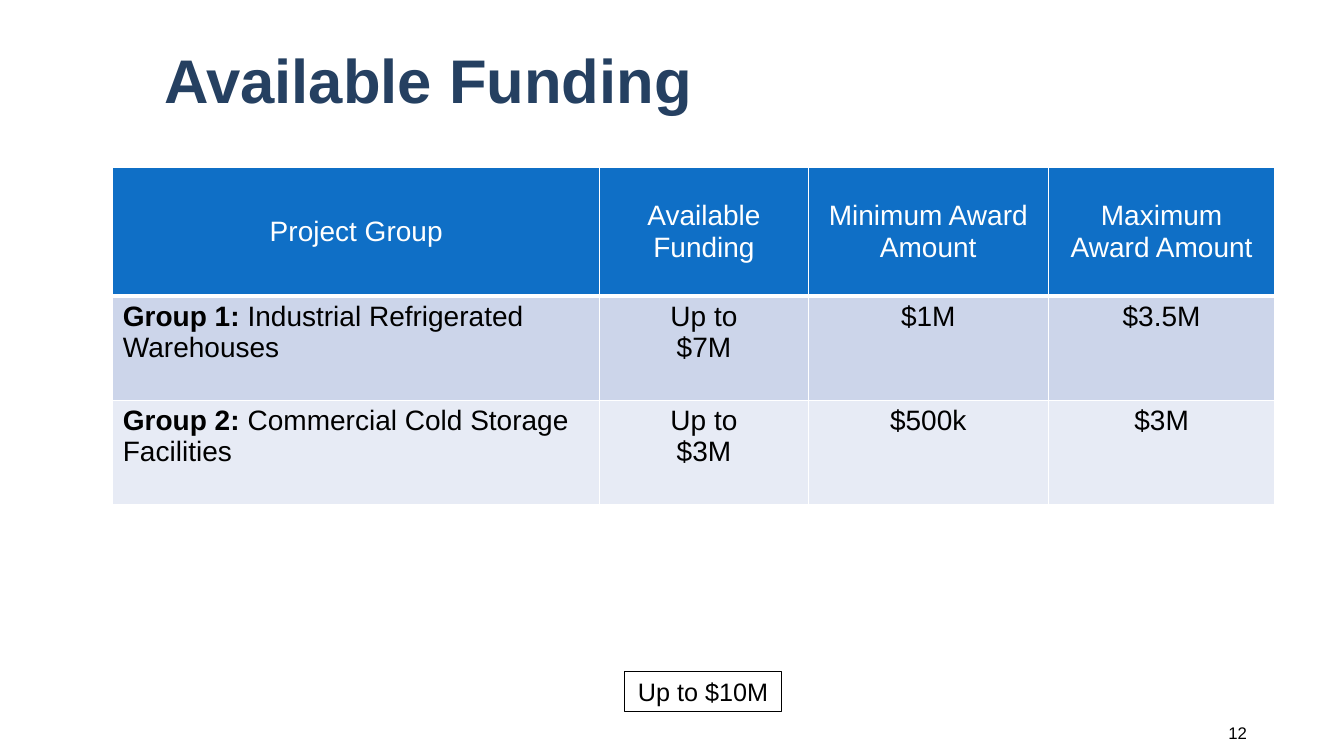
from dataclasses import dataclass

from lxml import etree
from pptx import Presentation
from pptx.dml.color import RGBColor
from pptx.enum.shapes import MSO_SHAPE
from pptx.enum.text import MSO_ANCHOR, PP_ALIGN
from pptx.oxml.ns import qn
from pptx.util import Pt

LEFT, CENTER, RIGHT = PP_ALIGN.LEFT, PP_ALIGN.CENTER, PP_ALIGN.RIGHT
TOP, MIDDLE = MSO_ANCHOR.TOP, MSO_ANCHOR.MIDDLE
RECTANGLE = MSO_SHAPE.RECTANGLE


@dataclass(frozen=True)
class Theme:
    """Colours, font and type sizes of the slide."""
    font: str = "Arial"
    navy: str = "254061"
    header: str = "0F6FC6"
    bands: tuple = ("CCD5EA", "E7EBF5")
    white: str = "FFFFFF"
    black: str = "000000"
    title_size: int = 44
    table_size: int = 20
    total_size: int = 18
    page_size: int = 12


THEME = Theme()
COLUMN_WIDTHS = (347.8, 149, 171.4, 162)
ROW_HEIGHTS = (92, 74.3, 74.3)
HEADINGS = ("Project Group", "Available Funding",
            "Minimum Award Amount", "Maximum Award Amount")
GROUPS = (
    ("Group 1: ", "Industrial Refrigerated Warehouses",
     ("Up to\n$7M", "$1M", "$3.5M")),
    ("Group 2: ", "Commercial Cold Storage Facilities",
     ("Up to\n$3M", "$500k", "$3M")),
)


def write_run(paragraph, text, size, color, bold=False):
    """Add a formatted run to a paragraph."""
    run = paragraph.add_run()
    run.text = text
    formats = {"name": THEME.font, "size": Pt(size), "bold": bold}
    for attribute, value in formats.items():
        setattr(run.font, attribute, value)
    run.font.color.rgb = RGBColor.from_string(color)


def write_lines(frame, text, size, color, align=LEFT, bold=False):
    """Write each line of the text as its own paragraph."""
    for index, line in enumerate(text.split("\n")):
        paragraph = frame.add_paragraph() if index else frame.paragraphs[0]
        paragraph.alignment = align
        write_run(paragraph, line, size, color, bold)


def add_label(slide, box, text, size, color, align=LEFT, bold=False):
    """Add a vertically centred text box."""
    frame = slide.shapes.add_textbox(*map(Pt, box)).text_frame
    frame.word_wrap = True
    frame.vertical_anchor = MIDDLE
    write_lines(frame, text, size, color, align, bold)
    return frame


def add_total(slide, box, text):
    """Add the outlined box with the total funding."""
    total = slide.shapes.add_shape(RECTANGLE, *map(Pt, box))
    total.shadow.inherit = False
    total.fill.background()
    total.line.color.rgb = RGBColor.from_string(THEME.black)
    total.line.width = Pt(0.75)
    total.text_frame.word_wrap = True
    total.text_frame.vertical_anchor = TOP
    write_lines(total.text_frame, text, THEME.total_size, THEME.black, CENTER)


def style_cell(cell, fill, anchor=TOP, bottom_width=1):
    """Give a cell its white borders, fill and anchor."""
    cell.vertical_anchor = anchor
    properties = cell._tc.get_or_add_tcPr()
    widths = {"a:lnL": 1, "a:lnR": 1, "a:lnT": 1, "a:lnB": bottom_width}
    for tag, width in widths.items():
        border = etree.SubElement(properties, qn(tag), w=str(Pt(width)))
        solid = etree.SubElement(border, qn("a:solidFill"))
        etree.SubElement(solid, qn("a:srgbClr"), val=THEME.white)
    cell.fill.solid()
    cell.fill.fore_color.rgb = RGBColor.from_string(fill)


def add_funding_table(slide, left, top):
    """Add the table of project groups and award amounts."""
    table = slide.shapes.add_table(
        len(ROW_HEIGHTS), len(COLUMN_WIDTHS), Pt(left), Pt(top),
        Pt(sum(COLUMN_WIDTHS)), Pt(sum(ROW_HEIGHTS))).table
    for column, width in zip(table.columns, COLUMN_WIDTHS):
        column.width = Pt(width)
    for row, height in zip(table.rows, ROW_HEIGHTS):
        row.height = Pt(height)
    size = THEME.table_size
    for cell, heading in zip(table.rows[0].cells, HEADINGS):
        style_cell(cell, THEME.header, MIDDLE, 3)
        write_lines(cell.text_frame, heading, size, THEME.white, CENTER)
    for index, (group, description, amounts) in enumerate(GROUPS):
        group_cell, *amount_cells = table.rows[index + 1].cells
        style_cell(group_cell, THEME.bands[index])
        paragraph = group_cell.text_frame.paragraphs[0]
        write_run(paragraph, group, size, THEME.black, True)
        write_run(paragraph, description, size, THEME.black)
        for cell, amount in zip(amount_cells, amounts):
            style_cell(cell, THEME.bands[index])
            write_lines(cell.text_frame, amount, size, THEME.black, CENTER)


def main():
    """Build the funding slide and save it."""
    deck = Presentation()
    deck.slide_width, deck.slide_height = Pt(960), Pt(540)
    slide = deck.slides.add_slide(deck.slide_layouts[6])
    title = add_label(slide, (110.2, 18.7, 784, 82), "Available Funding",
                      THEME.title_size, THEME.navy, bold=True)
    title.paragraphs[0].line_spacing = 0.9
    add_funding_table(slide, 80.6, 119.5)
    add_total(slide, (446.4, 479.5, 111.6, 29), "Up to $10M")
    add_label(slide, (756, 509, 141.8, 28.8), "12",
              THEME.page_size, THEME.black, RIGHT)
    deck.save("out.pptx")


if __name__ == "__main__":
    main()
